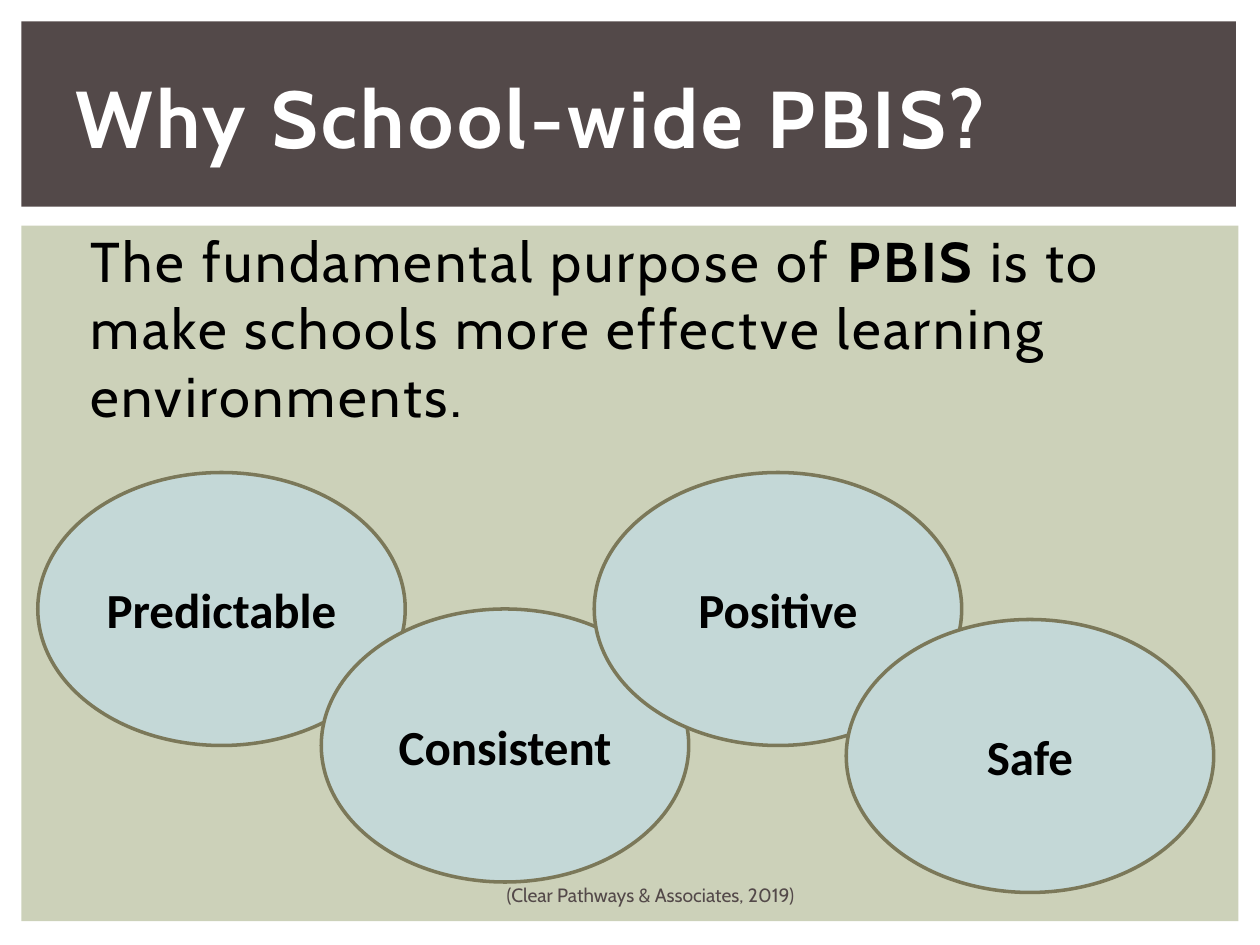
from pptx import Presentation
from pptx.dml.color import RGBColor
from pptx.enum.shapes import MSO_SHAPE
from pptx.enum.text import MSO_ANCHOR, MSO_AUTO_SIZE, PP_ALIGN
from pptx.util import Pt

RECTANGLE, OVAL = MSO_SHAPE.RECTANGLE, MSO_SHAPE.OVAL
TOP, MIDDLE = MSO_ANCHOR.TOP, MSO_ANCHOR.MIDDLE
LEFT, CENTER = PP_ALIGN.LEFT, PP_ALIGN.CENTER
NO_AUTOFIT = MSO_AUTO_SIZE.NONE

COLORS = {
    "panel": "CCD1B9", "banner": "534949", "oval": "C4D8D7",
    "outline": "7B7859", "white": "FFFFFF", "black": "000000",
}

# Each run is (text, bold)
TITLE = [("Why School-wide PBIS?", True)]
PURPOSE = [
    ("The fundamental purpose of ", False),
    ("PBIS ", True),
    ("is to make schools more effectve learning environments.", False),
]
SOURCE = [("(Clear Pathways & Associates, 2019)", False)]

# Left, top, width, height in points
BACKDROPS = [
    ("panel", (12.24, 128.88, 695.52, 397.44)),
    ("banner", (12.24, 12.24, 694.08, 105.84)),
]
TITLE_AREA = (36, 21.6, 599.76, 90)
PURPOSE_AREA = (36, 126, 663.84, 378)
SOURCE_AREA = (239.76, 500.4, 264.24, 21.6)

# Label, left, top in points
QUALITIES = [
    ("Predictable", 21.6, 270),
    ("Consistent", 183.6, 348),
    ("Positive", 339.6, 270),
    ("Safe", 483.6, 354),
]
OVAL_SIZE = (210, 156)


def rgb(name):
    return RGBColor.from_string(COLORS[name])


def points(values):
    return [Pt(value) for value in values]


def add_filled(page, kind, area, fill):
    shape = page.shapes.add_shape(kind, *points(area))
    shape.shadow.inherit = False
    shape.fill.solid()
    shape.fill.fore_color.rgb = rgb(fill)
    shape.line.fill.background()
    return shape


def write(shape, runs, size, color, font="Cabin", align=LEFT, anchor=MIDDLE,
          tracking=0):
    """Fill the shape with one paragraph; tracking is letter spacing in points."""
    frame = shape.text_frame
    frame.word_wrap = True
    frame.auto_size = NO_AUTOFIT
    frame.vertical_anchor = anchor
    para = frame.paragraphs[0]
    para.alignment = align
    for text, bold in runs:
        span = para.add_run()
        span.text = text
        span.font.name = font
        span.font.size = Pt(size)
        span.font.bold = bold
        span.font.color.rgb = rgb(color)
        if tracking:
            span._r.get_or_add_rPr().set("spc", str(int(tracking * 100)))
    return para


def main():
    deck = Presentation()
    deck.slide_width, deck.slide_height = Pt(720), Pt(540)
    page = deck.slides.add_slide(deck.slide_layouts[5])

    for fill, area in BACKDROPS:
        add_filled(page, RECTANGLE, area, fill)

    title = page.shapes.title
    title.left, title.top, title.width, title.height = points(TITLE_AREA)
    write(title, TITLE, 46, "white", tracking=2)
    page.shapes.element.append(title.element)  # bring in front of the banner

    purpose = page.shapes.add_textbox(*points(PURPOSE_AREA))
    para = write(purpose, PURPOSE, 32, "black", anchor=TOP, tracking=1.5)
    para._p.get_or_add_pPr().set("marL", str(Pt(8.64)))

    for label, left, top in QUALITIES:
        oval = add_filled(page, OVAL, (left, top, *OVAL_SIZE), "oval")
        oval.line.color.rgb = rgb("outline")
        oval.line.width = Pt(2)
        write(oval, [(label, True)], 28, "black", font="Calibri", align=CENTER)

    source = page.shapes.add_textbox(*points(SOURCE_AREA))
    write(source, SOURCE, 11, "banner", align=CENTER)

    deck.save("out.pptx")


if __name__ == "__main__":
    main()
